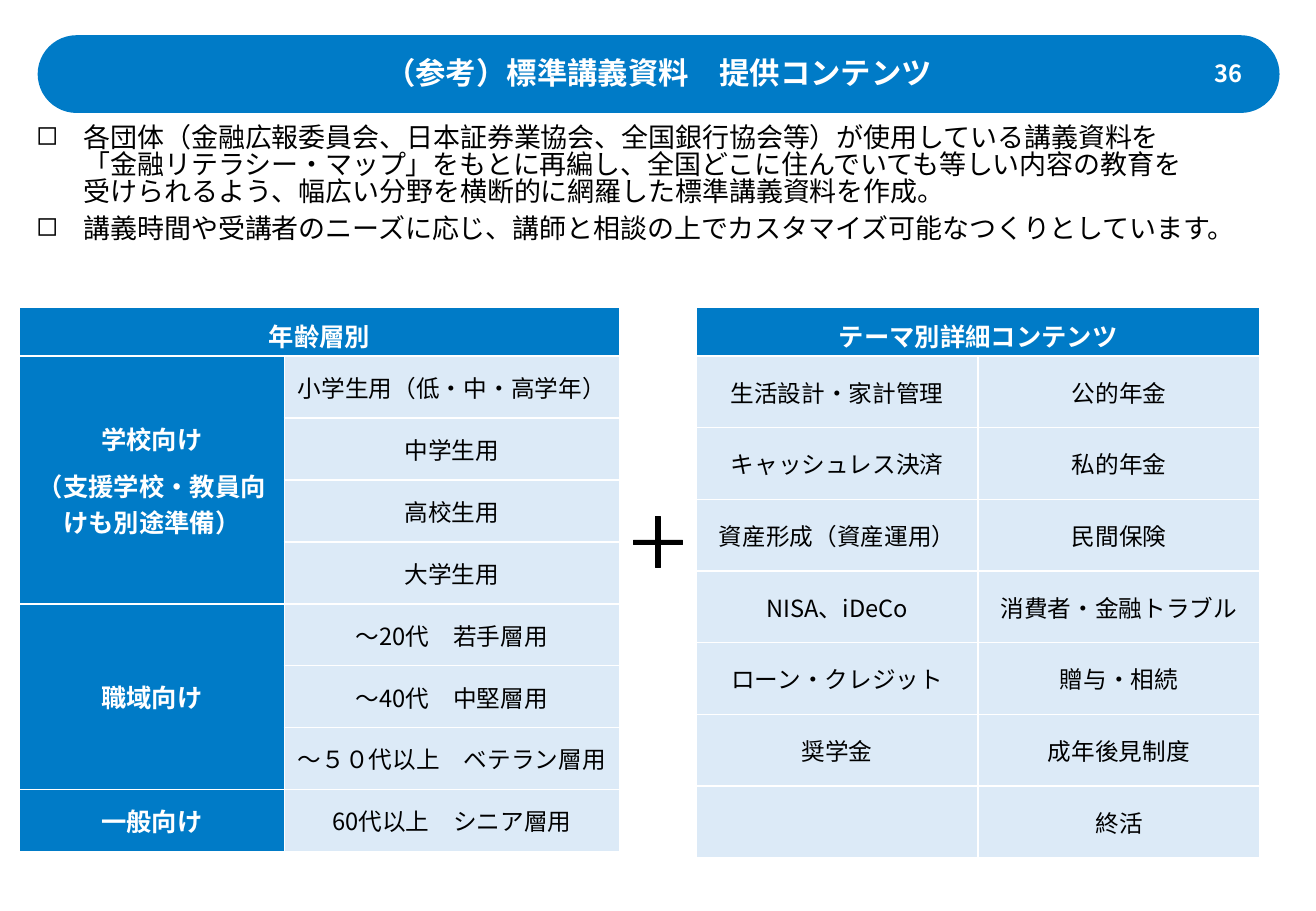
from dataclasses import dataclass

from lxml import etree
from pptx import Presentation
from pptx.dml.color import RGBColor
from pptx.enum.shapes import MSO_SHAPE
from pptx.enum.text import MSO_ANCHOR, PP_ALIGN
from pptx.oxml.ns import qn
from pptx.slide import Slide
from pptx.table import _Cell
from pptx.text.text import TextFrame
from pptx.util import Inches, Pt

LEFT, CENTER, RIGHT = PP_ALIGN.LEFT, PP_ALIGN.CENTER, PP_ALIGN.RIGHT
TOP, MIDDLE = MSO_ANCHOR.TOP, MSO_ANCHOR.MIDDLE
PILL, PLUS = MSO_SHAPE.ROUNDED_RECTANGLE, MSO_SHAPE.MATH_PLUS


@dataclass(frozen=True)
class Theme:
    """Colours, font and type sizes of the slide."""
    font: str = "Noto Sans CJK JP"
    blue: str = "007BC7"
    pale: str = "DCEAF7"
    white: str = "FFFFFF"
    black: str = "000000"
    title: float = 18
    lead: float = 16
    heading: float = 15
    body: float = 14


THEME = Theme()


@dataclass(frozen=True)
class TextStyle:
    """Look of the text in a box or cell."""
    size: float
    color: str = THEME.black
    bold: bool = False
    align: PP_ALIGN = CENTER
    space_after: float = 0
    line_spacing: float = 1.0
    bullet: str = ""


@dataclass(frozen=True)
class TextBox:
    """A text box with its place in inches."""
    box: tuple[float, float, float, float]
    paragraphs: tuple[str, ...]
    style: TextStyle
    anchor: MSO_ANCHOR = TOP


@dataclass(frozen=True)
class Shape:
    """A filled preset shape with its place in inches."""
    kind: MSO_SHAPE
    box: tuple[float, float, float, float]
    adjustment: float
    color: str
    line_width: float = 0


@dataclass(frozen=True)
class Group:
    """A blue row label and the contents it spans."""
    label: str
    contents: tuple[str, ...]


@dataclass(frozen=True)
class ContentTable:
    """A table with one heading over two columns."""
    left: float
    widths: tuple[float, float]
    row_height: float
    heading: str
    rows: tuple[tuple[str, str], ...] = ()
    groups: tuple[Group, ...] = ()


TABLE_TOP, HEADING_HEIGHT = 2.53, 0.4
HEADING_MARGINS = (0.04, 0.08, 0.04, 0.02)
BODY_MARGINS = (0.08, 0.04, 0.08, 0.04)
HEADING = TextStyle(THEME.heading, THEME.white, True)
BODY = TextStyle(THEME.body)

SHAPES = (
    Shape(PILL, (0.31, 0.29, 10.22, 0.64), 0.5, THEME.blue),
    Shape(PLUS, (5.14, 4.18, 0.55, 0.57), 0.069, THEME.black, 0.5),
)
TEXT_BOXES = (
    TextBox((9.73, 0.4, 0.59, 0.4), ("36",),
            TextStyle(THEME.body, THEME.white, True, RIGHT), MIDDLE),
    TextBox((1.87, 0.4, 7.1, 0.4), ("（参考）標準講義資料　提供コンテンツ",),
            TextStyle(THEME.title, THEME.white, True)),
    TextBox((0.2, 0.99, 10.43, 1.38), (
        "各団体（金融広報委員会、日本証券業協会、全国銀行協会等）が使用している講義資料を\n"
        "「金融リテラシー・マップ」をもとに再編し、全国どこに住んでいても等しい内容の教育を\n"
        "受けられるよう、幅広い分野を横断的に網羅した標準講義資料を作成。",
        "講義時間や受講者のニーズに応じ、講師と相談の上でカスタマイズ可能なつくりとしています。",
    ), TextStyle(THEME.lead, align=LEFT, space_after=6, line_spacing=0.83, bullet="◻")),
)
TABLES = (
    ContentTable(5.73, (2.32, 2.32), 0.59, "テーマ別詳細コンテンツ", rows=(
        ("生活設計・家計管理", "公的年金"),
        ("キャッシュレス決済", "私的年金"),
        ("資産形成（資産運用）", "民間保険"),
        ("NISA、iDeCo", "消費者・金融トラブル"),
        ("ローン・クレジット", "贈与・相続"),
        ("奨学金", "成年後見制度"),
        ("", "終活"),
    )),
    ContentTable(0.16, (2.18, 2.76), 0.51, "年齢層別", groups=(
        Group("学校向け\n（支援学校・教員向けも別途準備）",
              ("小学生用（低・中・高学年）", "中学生用", "高校生用", "大学生用")),
        Group("職域向け", ("～20代　若手層用", "～40代　中堅層用", "～５０代以上　ベテラン層用")),
        Group("一般向け", ("60代以上　シニア層用",)),
    )),
)


def write_text(frame: TextFrame, paragraphs: tuple[str, ...], style: TextStyle,
               gap: float = 0) -> None:
    """Fill a text frame with styled paragraphs."""
    font_values = {"name": THEME.font, "size": Pt(style.size), "bold": style.bold}
    paragraph_values = {"alignment": style.align, "space_after": Pt(style.space_after),
                        "line_spacing": style.line_spacing}
    for index, text in enumerate(paragraphs):
        paragraph = frame.add_paragraph() if index else frame.paragraphs[0]
        paragraph.text = text
        for name, value in paragraph_values.items():
            setattr(paragraph, name, value)
        paragraph.space_before = Pt(gap if index else 0)
        if style.bullet:
            properties = paragraph._p.get_or_add_pPr()
            properties.set("marL", str(Inches(0.39)))
            properties.set("indent", str(-Inches(0.39)))
            etree.SubElement(properties, qn("a:buChar"), char=style.bullet)
        for run in paragraph.runs:
            for name, value in font_values.items():
                setattr(run.font, name, value)
            run.font.color.rgb = RGBColor.from_string(style.color)
            etree.SubElement(run._r.get_or_add_rPr(), qn("a:ea"), typeface=THEME.font)
        for line_break in paragraph._p.findall(qn("a:br")):
            etree.SubElement(line_break, qn("a:rPr"), sz=str(int(style.size * 100)))


def draw_shape(slide: Slide, item: Shape) -> None:
    """Draw a filled preset shape."""
    shape = slide.shapes.add_shape(item.kind, *map(Inches, item.box))
    shape.shadow.inherit = False
    shape.adjustments[0] = item.adjustment
    shape.fill.solid()
    shape.fill.fore_color.rgb = RGBColor.from_string(item.color)
    if item.line_width:
        shape.line.color.rgb = RGBColor.from_string(item.color)
        shape.line.width = Pt(item.line_width)
    else:
        shape.line.fill.background()


def draw_text_box(slide: Slide, item: TextBox) -> None:
    """Draw a wrapped text box."""
    frame = slide.shapes.add_textbox(*map(Inches, item.box)).text_frame
    frame.word_wrap = True
    frame.vertical_anchor = item.anchor
    write_text(frame, item.paragraphs, item.style)


def format_cell(cell: _Cell, color: str, margins: tuple[float, ...]) -> None:
    """Give a cell white borders, a fill and margins."""
    properties = cell._tc.get_or_add_tcPr()
    for side in "LRTB":
        border = etree.SubElement(properties, qn(f"a:ln{side}"), w=str(Pt(1)))
        fill = etree.SubElement(border, qn("a:solidFill"))
        etree.SubElement(fill, qn("a:srgbClr"), val=THEME.white)
    cell.fill.solid()
    cell.fill.fore_color.rgb = RGBColor.from_string(color)
    cell.vertical_anchor = MIDDLE
    for side, margin in zip(("left", "top", "right", "bottom"), margins):
        setattr(cell, f"margin_{side}", Inches(margin))


def draw_table(slide: Slide, item: ContentTable) -> None:
    """Draw a content table with its heading and merged labels."""
    rows = item.rows or tuple((group.label if index == 0 else "", content)
                              for group in item.groups
                              for index, content in enumerate(group.contents))
    height = HEADING_HEIGHT + item.row_height * len(rows)
    table = slide.shapes.add_table(len(rows) + 1, 2, *map(
        Inches, (item.left, TABLE_TOP, sum(item.widths), height))).table
    for column, width in zip(table.columns, item.widths):
        column.width = Inches(width)
    for row_index, texts in enumerate(((item.heading, ""), *rows)):
        is_heading = row_index == 0
        table.rows[row_index].height = Inches(HEADING_HEIGHT if is_heading else item.row_height)
        for column_index, text in enumerate(texts):
            is_blue = is_heading or (bool(item.groups) and column_index == 0)
            cell = table.cell(row_index, column_index)
            format_cell(cell, THEME.blue if is_blue else THEME.pale,
                        HEADING_MARGINS if is_heading else BODY_MARGINS)
            if text:
                write_text(cell.text_frame, tuple(text.split("\n")),
                           HEADING if is_blue else BODY, gap=6)
    table.cell(0, 0).merge(table.cell(0, 1))
    first = 1
    for group in item.groups:
        last = first + len(group.contents) - 1
        if last > first:
            table.cell(first, 0).merge(table.cell(last, 0))
        first = last + 1


def main() -> None:
    """Build and save the slide."""
    presentation = Presentation()
    presentation.slide_width, presentation.slide_height = Inches(10.83), Inches(7.5)
    slide = presentation.slides.add_slide(presentation.slide_layouts[6])
    for items, draw in ((SHAPES, draw_shape), (TABLES, draw_table), (TEXT_BOXES, draw_text_box)):
        for item in items:
            draw(slide, item)
    presentation.save("out.pptx")


if __name__ == "__main__":
    main()
